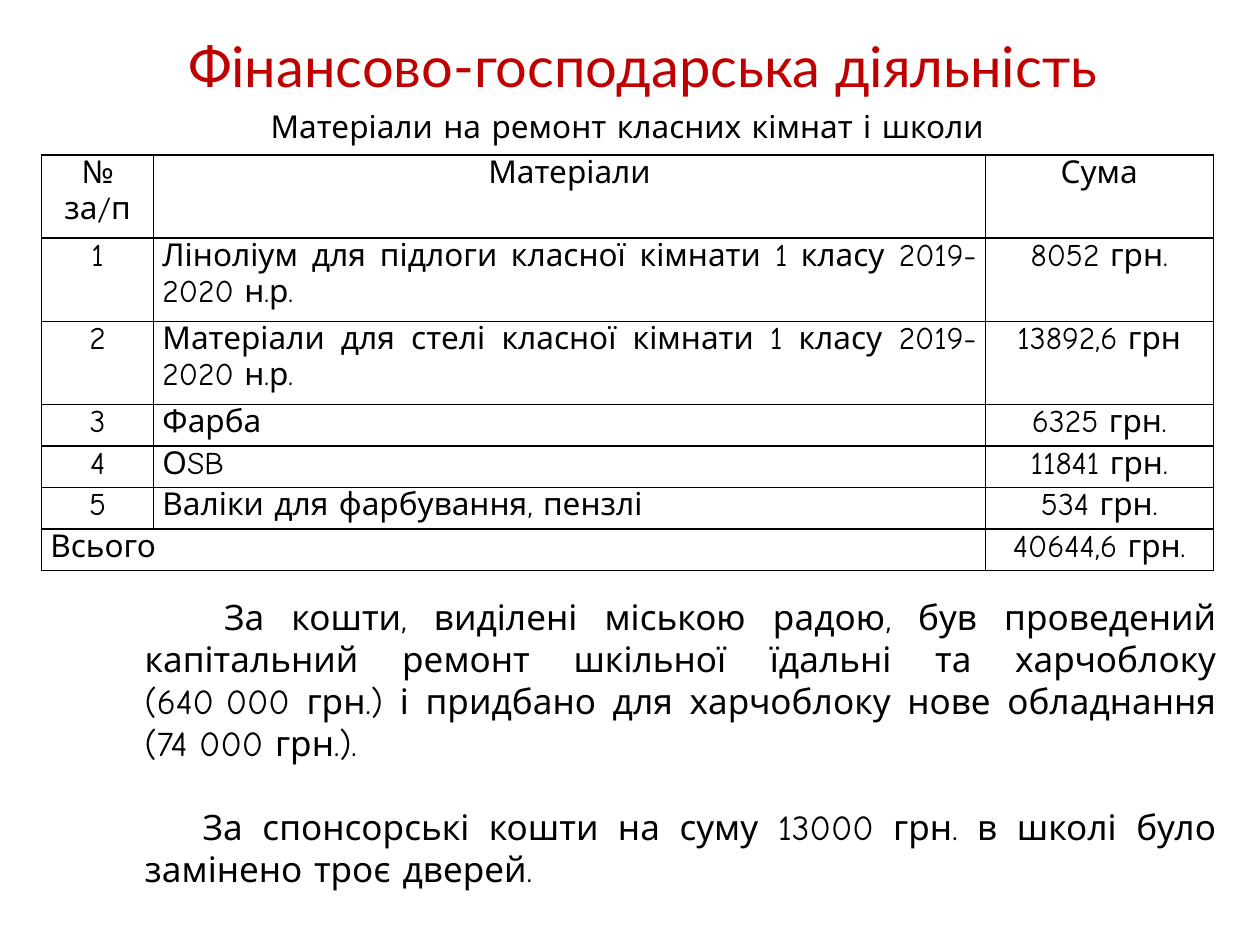
from pptx import Presentation
from pptx.dml.color import RGBColor as RGB
from pptx.enum.text import MSO_ANCHOR as Anchor, PP_ALIGN as Align
from pptx.oxml import parse_xml
from pptx.oxml.ns import nsdecls
from pptx.util import Inches, Pt

COLORS = {"title": "C00000", "ink": "000000"}
HEAD, BODY = "Lato", "Comic Neue"


class Page:
    def __init__(self, deck):
        self.slide = deck.slides.add_slide(deck.slide_layouts[5])

    def style(self, para, size, align, font=BODY, color="ink"):
        para.alignment = align
        for run in para.runs:
            run.font.size = Pt(size)
            run.font.name = font
            run.font.color.rgb = RGB.from_string(COLORS[color])

    def title(self, text, left, top, width, height):
        box = self.slide.shapes.title
        box.left, box.top = Inches(left), Inches(top)
        box.width, box.height = Inches(width), Inches(height)
        frame = box.text_frame
        frame.text = text
        frame.vertical_anchor = Anchor.TOP
        self.style(frame.paragraphs[0], 32, Align.CENTER, HEAD, "title")

    def text(self, items, left, top, width, height, size, align, gap=0):
        """Write (text, first-line indent) items as paragraphs."""
        box = self.slide.shapes.add_textbox(
            Inches(left), Inches(top), Inches(width), Inches(height))
        frame = box.text_frame
        frame.word_wrap = True
        frame.vertical_anchor = Anchor.MIDDLE
        for i, (line, indent) in enumerate(items):
            para = frame.add_paragraph() if i else frame.paragraphs[0]
            para.text = line
            if i:
                para.space_before = Pt(gap)
            if indent:
                props = para._p.get_or_add_pPr()
                props.set("marL", "0")
                props.set("indent", str(Inches(indent)))
            self.style(para, size, align)

    def border(self, cell):
        props = cell._tc.get_or_add_tcPr()
        for i, side in enumerate(("lnL", "lnR", "lnT", "lnB")):
            props.insert(i, parse_xml(
                f'<a:{side} {nsdecls("a")} w="{Pt(1)}"><a:solidFill>'
                f'<a:srgbClr val="{COLORS["ink"]}"/></a:solidFill></a:{side}>'))

    def table(self, rows, left, top, widths, heights):
        grid = self.slide.shapes.add_table(
            len(rows), len(widths), Inches(left), Inches(top),
            Inches(sum(widths)), Inches(sum(heights))).table
        grid.first_row = grid.horz_banding = False
        for col, width in zip(grid.columns, widths):
            col.width = Inches(width)
        for row, height in zip(grid.rows, heights):
            row.height = Inches(height)
        for r, row in enumerate(rows):
            for c, text in enumerate(row):
                cell = grid.cell(r, c)
                cell.fill.background()
                self.border(cell)
                cell.margin_left = cell.margin_right = Inches(0.07)
                cell.margin_top = cell.margin_bottom = 0
                cell.text_frame.text = text
                total = r == len(rows) - 1 and c == 0
                wide = total or (c == 1 and r > 0)
                self.style(cell.text_frame.paragraphs[0], 18,
                           Align.JUSTIFY if wide else Align.CENTER)
        # The total label spans the first two columns
        grid.cell(len(rows) - 1, 0).merge(grid.cell(len(rows) - 1, 1))


def main():
    deck = Presentation()
    deck.slide_width, deck.slide_height = Inches(10), Inches(7.5)
    page = Page(deck)

    # Headings
    page.title("Фінансово-господарська діяльність", 0.21, 0.2, 9.79, 0.64)
    page.text([("Матеріали на ремонт класних кімнат і школи", 0)],
              0.33, 0.8, 9.3, 0.4, 18, Align.CENTER)

    # Costs
    goods = [
        ("Ліноліум для підлоги класної кімнати 1 класу 2019-2020 н.р.", "8052 грн."),
        ("Матеріали для стелі класної кімнати 1 класу 2019-2020 н.р.", "13892,6 грн"),
        ("Фарба", "6325 грн."),
        ("ОSB", "11841 грн."),
        ("Валіки для фарбування, пензлі", "534 грн."),
    ]
    rows = [("№ за/п", "Матеріали", "Сума")]
    rows += [(str(n), name, cost) for n, (name, cost) in enumerate(goods, 1)]
    rows.append(("Всього", "", "40644,6 грн."))
    page.table(rows, 0.33, 1.23, [0.89, 6.6, 1.81], [0.66] * 3 + [0.33] * 4)

    # Notes on spending
    page.text([
        ("За кошти, виділені міською радою, був проведений капітальний ремонт "
         "шкільної їдальні та харчоблоку\v(640\u00a0000 грн.) і придбано для "
         "харчоблоку нове обладнання (74\u00a0000 грн.).", 0.63),
        ("За спонсорські кошти на суму 13000 грн. в школі було замінено "
         "троє дверей.", 0.46),
    ], 1.05, 4.66, 8.7, 2.46, 20, Align.JUSTIFY, gap=24)

    deck.save("out.pptx")


if __name__ == "__main__":
    main()
